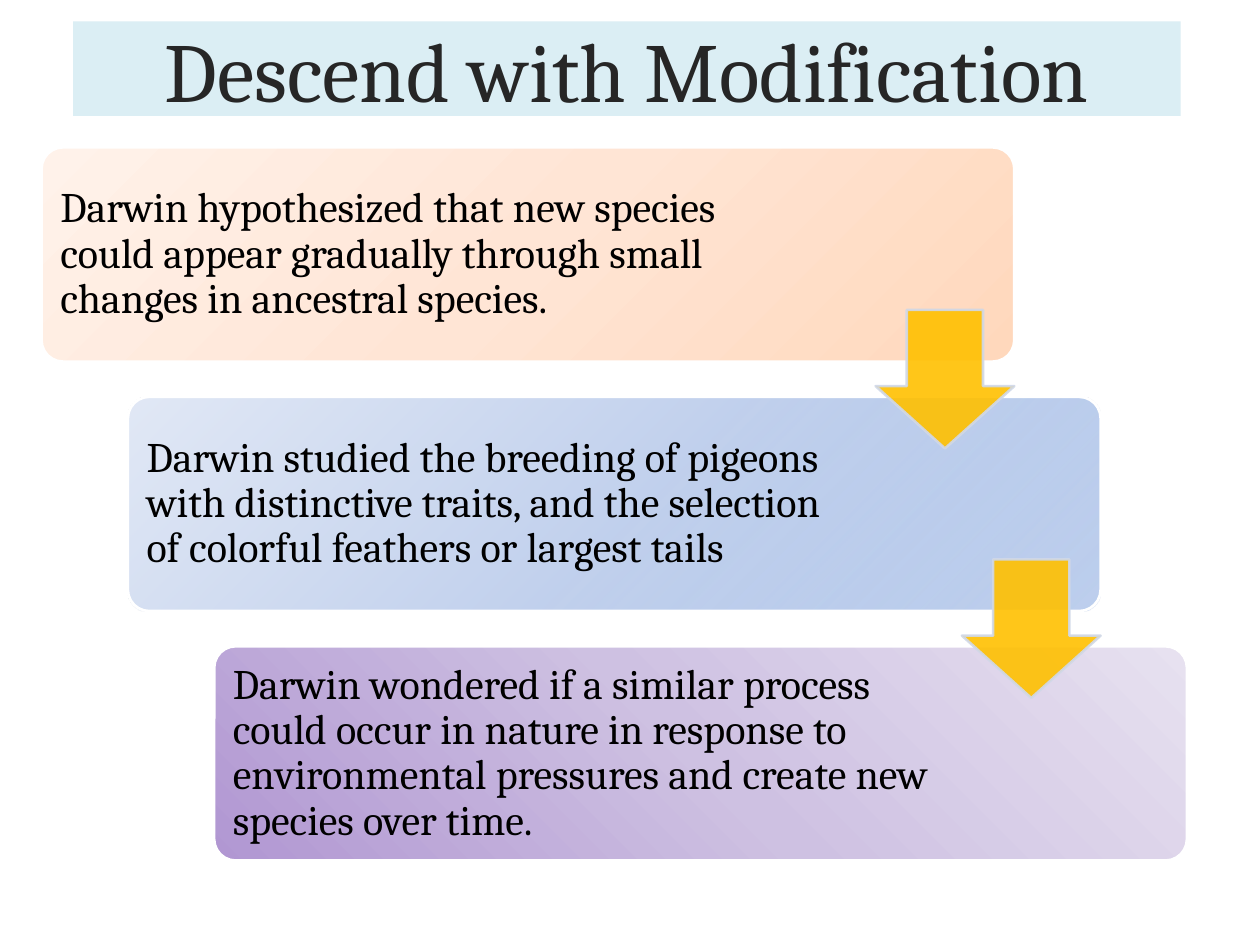
from lxml import etree
from pptx import Presentation
from pptx.dml.color import RGBColor
from pptx.enum.shapes import MSO_SHAPE
from pptx.enum.text import MSO_ANCHOR, MSO_AUTO_SIZE, PP_ALIGN
from pptx.oxml.ns import qn
from pptx.util import Inches, Pt

ROUNDED, DOWN_ARROW = MSO_SHAPE.ROUNDED_RECTANGLE, MSO_SHAPE.DOWN_ARROW
MIDDLE, CENTER = MSO_ANCHOR.MIDDLE, PP_ALIGN.CENTER
NO_AUTOFIT = MSO_AUTO_SIZE.NONE

FONT = "Cambria"
PALE_TEAL = RGBColor(0xDB, 0xEE, 0xF4)
CHARCOAL = RGBColor(0x26, 0x26, 0x26)
BLACK = RGBColor(0x00, 0x00, 0x00)
WHITE = RGBColor(0xFF, 0xFF, 0xFF)
GOLD = RGBColor(0xFF, 0xC0, 0x00)
ARROW_EDGE = RGBColor(0xD0, 0xD8, 0xE8)
ORANGES = [RGBColor(0xFF, 0xD8, 0xBC), RGBColor(0xFF, 0xE5, 0xD5), RGBColor(0xFF, 0xF2, 0xEA)]
BLUES = [RGBColor(0x9A, 0xB5, 0xE4), RGBColor(0xC2, 0xD1, 0xED), RGBColor(0xE1, 0xE8, 0xF5)]
PURPLES = [RGBColor(0xB1, 0x97, 0xD2), RGBColor(0xCE, 0xC1, 0xE2), RGBColor(0xE7, 0xE1, 0xF0)]

CARD_WIDTH, CARD_HEIGHT = Inches(7.72), Inches(1.7)
ARROW_SIZE = Inches(1.1)
ARROW_DROP = Inches(1.29)
TEXT_MARGIN = Inches(0.05)

# Text, text width, gradient colours, opacity of the first one, gradient
# direction: an angle in degrees, or the corner from which circles spread.
STEPS = [
    ("Darwin hypothesized that new species could appear gradually through small "
     "changes in ancestral species.", Inches(5.89), ORANGES, 100, 225),
    ("Darwin studied the breeding of pigeons with distinctive traits, and the "
     "selection of colorful feathers or largest tails", Inches(5.84), BLUES, 65, "lt"),
    ("Darwin wondered if a similar process could occur in nature in response to "
     "environmental pressures and create new species over time.",
     Inches(5.84), PURPLES, 100, "tr"),
]


def set_opacity(color_element, percent):
    etree.SubElement(color_element, qn("a:alpha"), val=str(percent * 1000))


def set_gradient(shape, colors, first_opacity, direction):
    """direction is an angle, or the fillToRect sides that are at 100 %."""
    gradient = etree.Element(qn("a:gradFill"), rotWithShape="1")
    stops = etree.SubElement(gradient, qn("a:gsLst"))
    for position, color in zip((0, 50, 100), colors):
        stop = etree.SubElement(stops, qn("a:gs"), pos=str(position * 1000))
        stop_color = etree.SubElement(stop, qn("a:srgbClr"), val=str(color))
        if position == 0 and first_opacity < 100:
            set_opacity(stop_color, first_opacity)
    if isinstance(direction, int):
        etree.SubElement(gradient, qn("a:lin"), ang=str(direction * 60000), scaled="0")
    else:
        circle = etree.SubElement(gradient, qn("a:path"), path="circle")
        etree.SubElement(circle, qn("a:fillToRect"), {side: "100000" for side in direction})
    shape._element.spPr.find(qn("a:prstGeom")).addnext(gradient)


def add_title(slide, left, top, width, height):
    title = slide.shapes.title
    title.left, title.top, title.width, title.height = left, top, width, height
    title.fill.solid()
    title.fill.fore_color.rgb = PALE_TEAL
    frame = title.text_frame
    frame.text = "Descend with Modification"
    frame.auto_size = NO_AUTOFIT
    frame.vertical_anchor = MIDDLE
    paragraph = frame.paragraphs[0]
    paragraph.alignment = CENTER
    paragraph.font.name, paragraph.font.size = FONT, Pt(48)
    paragraph.font.color.rgb = CHARCOAL


def add_card(slide, left, top, text, text_width, colors, first_opacity, direction):
    card = slide.shapes.add_shape(ROUNDED, left, top, CARD_WIDTH, CARD_HEIGHT)
    card.shadow.inherit = False
    card.adjustments[0] = 0.1
    set_gradient(card, colors, first_opacity, direction)
    card.line.color.rgb = WHITE
    card.line.width = Pt(1.5)

    label = slide.shapes.add_textbox(left + TEXT_MARGIN, top + TEXT_MARGIN,
                                     text_width, CARD_HEIGHT - 2 * TEXT_MARGIN)
    frame = label.text_frame
    frame.text = text
    frame.word_wrap = True
    frame.vertical_anchor = MIDDLE
    frame.margin_left = frame.margin_right = Inches(0.1)
    frame.margin_top = frame.margin_bottom = Inches(0.1)
    paragraph = frame.paragraphs[0]
    paragraph.line_spacing = 0.9
    paragraph.font.name, paragraph.font.size = FONT, Pt(24)
    paragraph.font.color.rgb = BLACK


def add_arrow(slide, left, top):
    arrow = slide.shapes.add_shape(DOWN_ARROW, left, top, ARROW_SIZE, ARROW_SIZE)
    arrow.shadow.inherit = False
    arrow.adjustments[0], arrow.adjustments[1] = 0.55, 0.45
    arrow.fill.solid()
    arrow.fill.fore_color.rgb = GOLD
    arrow.line.color.rgb = ARROW_EDGE
    arrow.line.width = Pt(1.5)
    for color_element in arrow._element.spPr.iter(qn("a:srgbClr")):
        set_opacity(color_element, 90)


def add_staircase(slide, left, top, width, height):
    """Cards stepping down to the right, with an arrow from each to the next."""
    gaps = len(STEPS) - 1
    step_x, step_y = (width - CARD_WIDTH) // gaps, (height - CARD_HEIGHT) // gaps
    corners = [(left + i * step_x, top + i * step_y) for i in range(len(STEPS))]
    for (card_left, card_top), step in zip(corners, STEPS):
        add_card(slide, card_left, card_top, *step)
    for card_left, card_top in corners[:-1]:
        add_arrow(slide, card_left + CARD_WIDTH - ARROW_SIZE, card_top + ARROW_DROP)


def main():
    presentation = Presentation()
    presentation.slide_width, presentation.slide_height = Inches(10), Inches(7.5)
    title_only = presentation.slide_layouts[5]
    slide = presentation.slides.add_slide(title_only)
    add_title(slide, Inches(0.58), Inches(0.17), Inches(8.79), Inches(0.75))
    add_staircase(slide, Inches(0.33), Inches(1.17), Inches(9.09), Inches(5.66))
    presentation.save("out.pptx")


if __name__ == "__main__":
    main()
